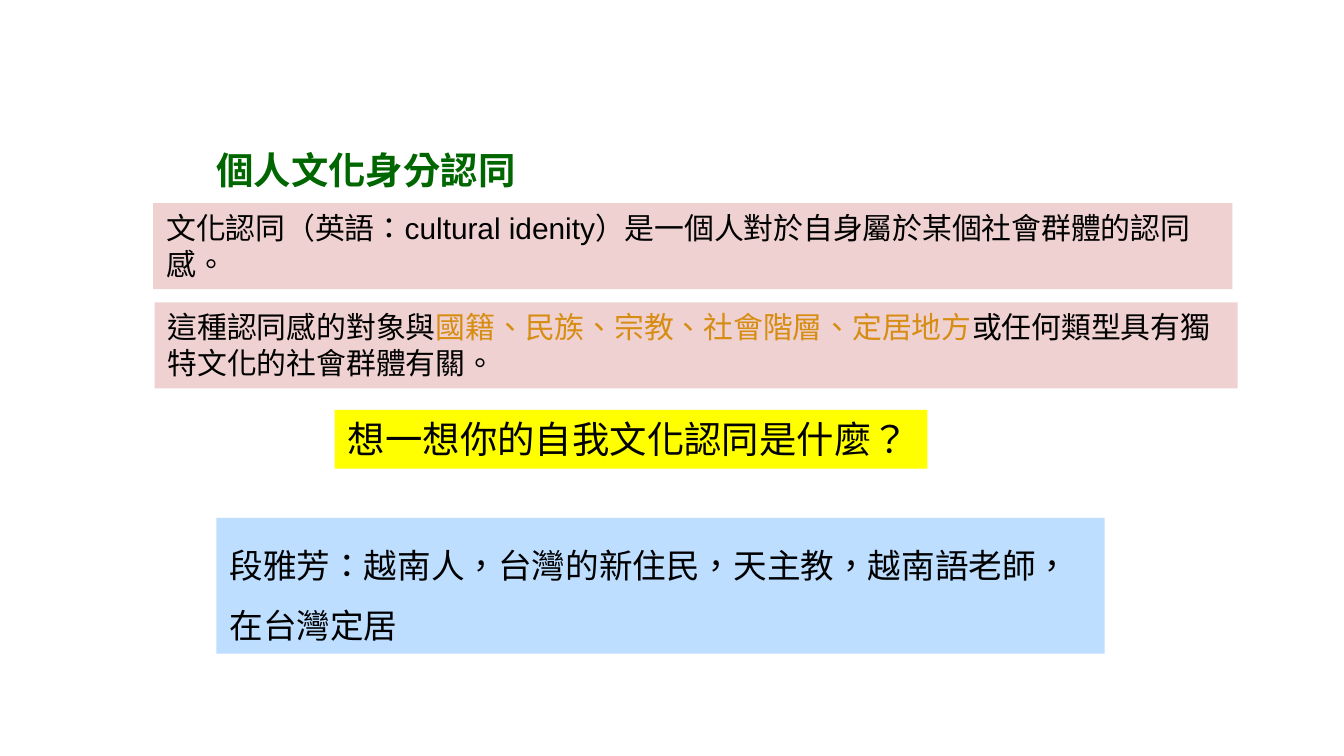
from dataclasses import dataclass

from pptx import Presentation
from pptx.dml.color import RGBColor
from pptx.enum.lang import MSO_LANGUAGE_ID as Language
from pptx.enum.shapes import MSO_SHAPE as Preset
from pptx.enum.text import MSO_ANCHOR as Anchor, MSO_AUTO_SIZE as AutoSize, PP_ALIGN as Align
from pptx.util import Inches, Pt

SLIDE_WIDTH = Inches(10)
SLIDE_HEIGHT = SLIDE_WIDTH * 9 // 16
BLACK, GREEN, ORANGE = "000000", "006600", "D78D13"
PINK, YELLOW, BLUE = "EFD1D1", "FFFF00", "BDDEFF"


@dataclass(frozen=True)
class Area:
    """A place on the slide, in percent of its width and height."""
    left: float
    top: float
    width: float
    height: float


@dataclass(frozen=True)
class Run:
    text: str
    color: str = BLACK


@dataclass(frozen=True)
class Panel:
    area: Area
    fill: str
    size: int
    runs: tuple[Run, ...]
    line_spacing: float = 1.0
    wrap: bool = True


TITLE_AREA = Area(15.1, 18.13, 74.5, 8.53)
PANELS = (
    Panel(Area(11.4, 26.87, 80.3, 11.38), PINK, 16, (
        Run("文化認同（英語：cultural idenity）是一個人對於自身屬於某個社會群體的認同感。"),
    )),
    Panel(Area(11.5, 40, 80.6, 11.38), PINK, 16, (
        Run("這種認同感的對象與"),
        Run("國籍、民族、宗教、社會階層、定居地方", ORANGE),
        Run("或任何類型具有獨特文化的社會群體有關。"),
    )),
    Panel(Area(24.9, 54.22, 44.1, 7.8), YELLOW, 20, (
        Run("想一想你的自我文化認同是什麼？"),
    ), wrap=False),
    Panel(Area(16.1, 68.5, 66.1, 17.96), BLUE, 18, (
        Run("段雅芳：越南人，台灣的新住民，天主教，越南語老師，在台灣定居"),
    ), line_spacing=1.5),
)


def rgb(color: str) -> RGBColor:
    return RGBColor.from_string(color)


def set_values(target, values: dict) -> None:
    for name, value in values.items():
        setattr(target, name, value)


def place(shape, area: Area) -> None:
    set_values(shape, {
        "left": round(SLIDE_WIDTH * area.left / 100),
        "top": round(SLIDE_HEIGHT * area.top / 100),
        "width": round(SLIDE_WIDTH * area.width / 100),
        "height": round(SLIDE_HEIGHT * area.height / 100),
    })


def add_run(paragraph, content: Run, size: int, font: str, bold: bool = False) -> None:
    run = paragraph.add_run()
    run.text = content.text
    set_values(run.font, {
        "size": Pt(size), "name": font, "bold": bold,
        "language_id": Language.TRADITIONAL_CHINESE,
    })
    run.font.color.rgb = rgb(content.color)


def draw_title(slide) -> None:
    title = slide.shapes.title
    place(title, TITLE_AREA)
    margins = {f"margin_{side}": Inches(0.1) for side in ("left", "top", "right", "bottom")}
    set_values(title.text_frame, margins | {
        "vertical_anchor": Anchor.MIDDLE, "word_wrap": True, "auto_size": AutoSize.NONE,
    })
    paragraph = title.text_frame.paragraphs[0]
    paragraph.alignment = Align.LEFT
    add_run(paragraph, Run("個人文化身分認同", GREEN), 20, "Cambria", bold=True)


def draw_panel(slide, panel: Panel) -> None:
    shape = slide.shapes.add_shape(Preset.RECTANGLE, 0, 0, 0, 0)
    place(shape, panel.area)
    shape.shadow.inherit = False
    shape.fill.solid()
    shape.fill.fore_color.rgb = rgb(panel.fill)
    shape.line.fill.background()
    set_values(shape.text_frame, {
        "word_wrap": panel.wrap,
        "auto_size": AutoSize.SHAPE_TO_FIT_TEXT,
        "vertical_anchor": Anchor.TOP,
    })
    paragraph = shape.text_frame.paragraphs[0]
    set_values(paragraph, {"alignment": Align.LEFT, "line_spacing": panel.line_spacing})
    for content in panel.runs:
        add_run(paragraph, content, panel.size, "Arial")


def main() -> None:
    presentation = Presentation()
    set_values(presentation, {"slide_width": SLIDE_WIDTH, "slide_height": SLIDE_HEIGHT})
    slide = presentation.slides.add_slide(presentation.slide_layouts.get_by_name("Title Only"))
    draw_title(slide)
    for panel in PANELS:
        draw_panel(slide, panel)
    presentation.save("out.pptx")


if __name__ == "__main__":
    main()
